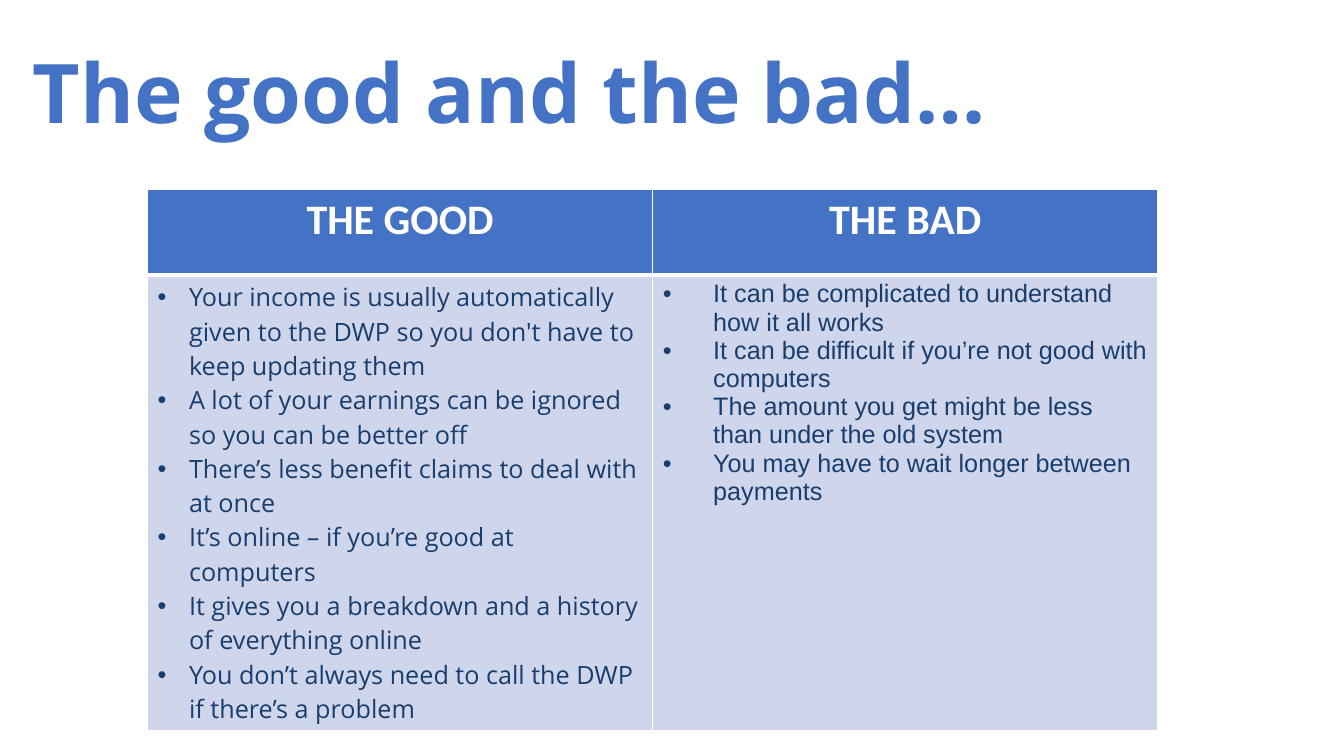
from lxml.etree import SubElement
from pptx import Presentation
from pptx.dml.color import RGBColor
from pptx.enum.text import MSO_ANCHOR, PP_ALIGN
from pptx.oxml.ns import qn
from pptx.util import Cm, Pt

TITLE = "The good and the bad…"
COLUMNS = [
    {
        "heading": "THE GOOD",
        "font": "Open Sans",
        "indent": Cm(0.79),
        "points": [
            "Your income is usually automatically given to the DWP so you don't have to keep updating them",
            "A lot of your earnings can be ignored so you can be better off",
            "There’s less benefit claims to deal with at once",
            "It’s online – if you’re good at computers",
            "It gives you a breakdown and a history of everything online",
            "You don’t always need to call the DWP if there’s a problem",
        ],
    },
    {
        "heading": "THE BAD",
        "font": "Arial",
        "indent": Cm(1.27),
        "points": [
            "It can be complicated to understand how it all works",
            "It can be difficult if you’re not good with computers",
            "The amount you get might be less than under the old system",
            "You may have to wait longer between payments",
        ],
    },
]
THEME = {
    "accent": "4472C4",
    "body_fill": "CFD5EA",
    "body_text": "183E70",
    "white": "FFFFFF",
    "title_font": "Open Sans",
    "heading_font": "Calibri",
    "title_size": Pt(58.7),
    "heading_size": Pt(30),
    "body_size": Pt(18),
    "thin": Pt(1),
    "thick": Pt(3),
}
COLUMN_WIDTH = Cm(12.73)
HEADING_HEIGHT, BODY_HEIGHT = Cm(2.15), Cm(11.48)


def style(p, font, size, color, bold):
    for r in p.runs:
        r.font.name = font
        r.font.size = size
        r.font.bold = bold
        r.font.color.rgb = RGBColor.from_string(THEME[color])


def add_bullet(p, indent):
    pPr = p._p.get_or_add_pPr()
    pPr.set("marL", str(indent))
    pPr.set("indent", str(-indent))
    SubElement(pPr, qn("a:buFont"), typeface="Arial")
    SubElement(pPr, qn("a:buChar"), char="•")


def paint(cell, fill, top, bottom):
    """Draw white borders, then the fill, which must follow them in the XML."""
    tcPr = cell._tc.get_or_add_tcPr()
    widths = {"lnL": THEME["thin"], "lnR": THEME["thin"], "lnT": top, "lnB": bottom}
    for side, width in widths.items():
        ln = SubElement(tcPr, qn(f"a:{side}"), w=str(width))
        SubElement(SubElement(ln, qn("a:solidFill")), qn("a:srgbClr"), val=THEME["white"])
    cell.fill.solid()
    cell.fill.fore_color.rgb = RGBColor.from_string(THEME[fill])
    cell.vertical_anchor = MSO_ANCHOR.TOP


def add_title(s):
    tf = s.shapes.add_textbox(Cm(0.58), Cm(0.79), Cm(29.13), Cm(8.41)).text_frame
    tf.word_wrap = True
    tf.margin_left = tf.margin_right = tf.margin_top = tf.margin_bottom = Cm(0.25)
    tf.text = TITLE
    style(tf.paragraphs[0], THEME["title_font"], THEME["title_size"], "accent", True)


def add_comparison(s):
    table = s.shapes.add_table(
        2, len(COLUMNS), Cm(3.72), Cm(4.78),
        COLUMN_WIDTH * len(COLUMNS), HEADING_HEIGHT + BODY_HEIGHT,
    ).table
    table.rows[0].height, table.rows[1].height = HEADING_HEIGHT, BODY_HEIGHT
    for i, column in enumerate(COLUMNS):
        table.columns[i].width = COLUMN_WIDTH
        heading, body = table.cell(0, i), table.cell(1, i)
        paint(heading, "accent", THEME["thin"], THEME["thick"])
        paint(body, "body_fill", THEME["thick"], THEME["thin"])

        heading.text_frame.text = column["heading"]
        p = heading.text_frame.paragraphs[0]
        p.alignment = PP_ALIGN.CENTER
        style(p, THEME["heading_font"], THEME["heading_size"], "white", True)

        body.text_frame.text = "\n".join(column["points"])
        for p in body.text_frame.paragraphs:
            add_bullet(p, column["indent"])
            style(p, column["font"], THEME["body_size"], "body_text", False)


def main():
    prs = Presentation()
    prs.slide_width, prs.slide_height = Cm(33.87), Cm(19.05)
    s = prs.slides.add_slide(prs.slide_layouts[6])
    add_title(s)
    add_comparison(s)
    prs.save("out.pptx")


if __name__ == "__main__":
    main()
